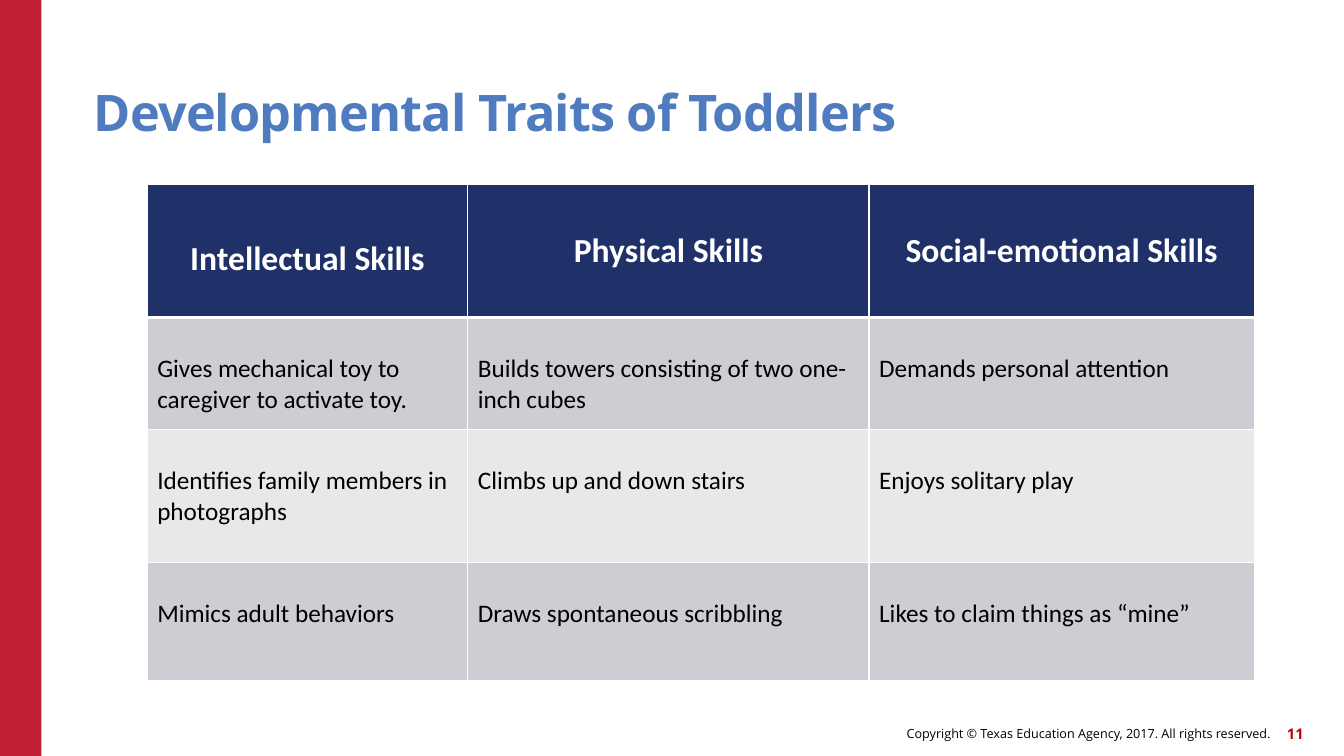
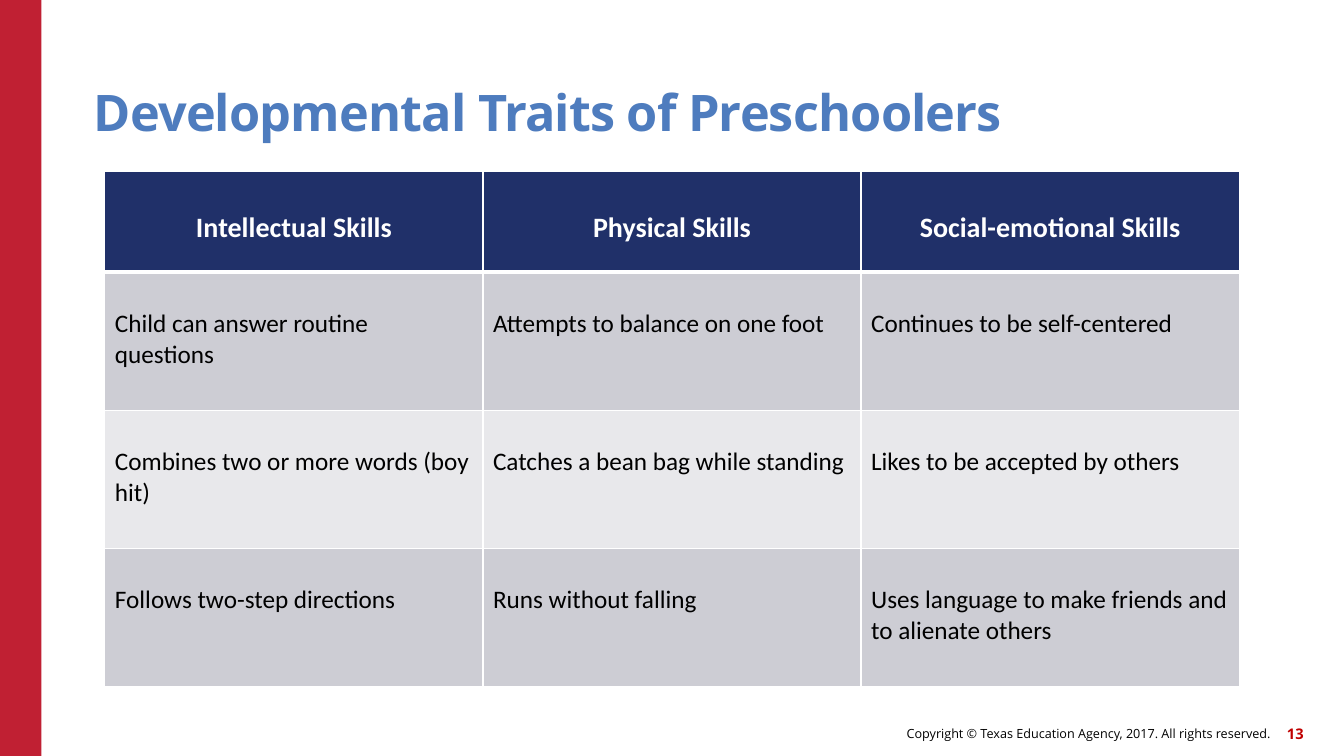
from pptx import Presentation
from pptx.dml.color import RGBColor
from pptx.enum.shapes import MSO_SHAPE
from pptx.enum.text import MSO_ANCHOR, MSO_AUTO_SIZE, PP_ALIGN
from pptx.oxml import parse_xml
from pptx.oxml.ns import nsdecls
from pptx.util import Inches, Pt


def rgb(value):
    return RGBColor.from_string(value)


class Deck:
    """Shared style and the current slide."""
    RED, DARK_RED, BLUE, NAVY = "C02033", "C00000", "4E7CBE", "203069"
    BLACK, WHITE = "000000", "FFFFFF"
    BANDS = "CDCDD4", "E8E8EB"
    HEAD_FONT, TABLE_FONT = "Open Sans", "Calibri"
    COPYRIGHT = "Copyright © Texas Education Agency, 2017. All rights reserved."

    def __init__(self):
        self.prs = Presentation()
        self.prs.slide_width, self.prs.slide_height = Inches(13.33), Inches(7.5)

    def style(self, p, size, font, color, bold=False, align=PP_ALIGN.LEFT):
        p.alignment = align
        p.font.size, p.font.name, p.font.bold = Pt(size), font, bold
        p.font.color.rgb = rgb(color)

    def frame(self, sp, text, anchor):
        tf = sp.text_frame
        tf.margin_left = tf.margin_right = tf.margin_top = tf.margin_bottom = 0
        tf.word_wrap, tf.auto_size = True, MSO_AUTO_SIZE.NONE
        tf.vertical_anchor = anchor
        tf.text = text
        return tf.paragraphs[0]

    def slide(self, title, number):
        self.s = self.prs.slides.add_slide(self.prs.slide_layouts[5])
        self.band()
        self.title(title)
        self.footer(self.COPYRIGHT, 6.14, 6.46, 9, self.BLACK)
        self.footer(str(number), 12.51, 0.42, 10.5, self.DARK_RED, True)

    def band(self):
        sp = self.s.shapes.add_shape(MSO_SHAPE.RECTANGLE, 0, 0, Inches(0.41),
                                     self.prs.slide_height)
        sp.shadow.inherit = False
        sp.fill.solid()
        sp.fill.fore_color.rgb = rgb(self.RED)
        sp.line.fill.background()

    def title(self, text):
        sp = self.s.shapes.title
        sp.left, sp.top = Inches(0.93), Inches(0.45)
        sp.width, sp.height = Inches(10.88), Inches(0.96)
        p = self.frame(sp, text, MSO_ANCHOR.BOTTOM)
        self.style(p, 36, self.HEAD_FONT, self.BLUE, True)
        p.line_spacing = 0.9
        p.runs[0].font._element.set("spc", "-60")

    def footer(self, text, left, width, size, color, bold=False):
        sp = self.s.shapes.add_textbox(Inches(left), Inches(7.12),
                                       Inches(width), Inches(0.32))
        p = self.frame(sp, text, MSO_ANCHOR.MIDDLE)
        self.style(p, size, self.HEAD_FONT, color, bold, PP_ALIGN.RIGHT)

    def borders(self, cell, top, bottom):
        tc_pr = cell._tc.get_or_add_tcPr()
        for side, points in zip("LRTB", (1, 1, top, bottom)):
            tc_pr.append(parse_xml(
                f'<a:ln{side} {nsdecls("a")} w="{Pt(points)}"><a:solidFill>'
                f'<a:srgbClr val="{self.WHITE}"/></a:solidFill></a:ln{side}>'))

    def table(self, left, top, cols, heights, rows, head_size, head_tops):
        """head_tops: inset above each heading, in inches."""
        table = self.s.shapes.add_table(
            len(rows), len(cols), Inches(left), Inches(top),
            Inches(sum(cols)), Inches(sum(heights))).table
        for column, width in zip(table.columns, cols):
            column.width = Inches(width)
        for i, (row, height, texts) in enumerate(zip(table.rows, heights, rows)):
            row.height = Inches(height)
            for j, (cell, text) in enumerate(zip(row.cells, texts)):
                head = i == 0
                self.borders(cell, 3 if i == 1 else 1, 3 if head else 1)
                cell.fill.solid()
                cell.fill.fore_color.rgb = rgb(
                    self.NAVY if head else self.BANDS[(i - 1) % 2])
                cell.margin_top = Inches(head_tops[j] if head else 0.36)
                cell.text = text
                p = cell.text_frame.paragraphs[0]
                if head:
                    self.style(p, head_size, self.TABLE_FONT, self.WHITE, True,
                               PP_ALIGN.CENTER)
                else:
                    self.style(p, 18, self.TABLE_FONT, self.BLACK)


def main():
    deck = Deck()
    skills = ["Intellectual Skills", "Physical Skills", "Social-emotional Skills"]

    # Toddlers
    deck.slide("Developmental Traits of Toddlers", 11)
    deck.table(1.46, 1.83, [3.18, 3.98, 3.82], [1.32, 1.11, 1.32, 1.17], [
        skills,
        ["Gives mechanical toy to caregiver to activate toy.",
         "Builds towers consisting of two one-inch cubes",
         "Demands personal attention"],
        ["Identifies family members in photographs",
         "Climbs up and down stairs", "Enjoys solitary play"],
        ["Mimics adult behaviors", "Draws spontaneous scribbling",
         "Likes to claim things as “mine”"],
    ], 24, [0.54, 0.46, 0.46])

    # Preschoolers
    deck.slide("Developmental Traits of Preschoolers", 13)
    deck.table(1.04, 1.7, [3.75] * 3, [1] + [1.37] * 3, [
        skills,
        ["Child can answer routine questions",
         "Attempts to balance on one foot", "Continues to be self-centered"],
        ["Combines two or more words (boy hit)",
         "Catches a bean bag while standing", "Likes to be accepted by others"],
        ["Follows two-step directions", "Runs without falling",
         "Uses language to make friends and to alienate others"],
    ], 20, [0.39] * 3)

    deck.prs.save("out.pptx")


if __name__ == "__main__":
    main()
